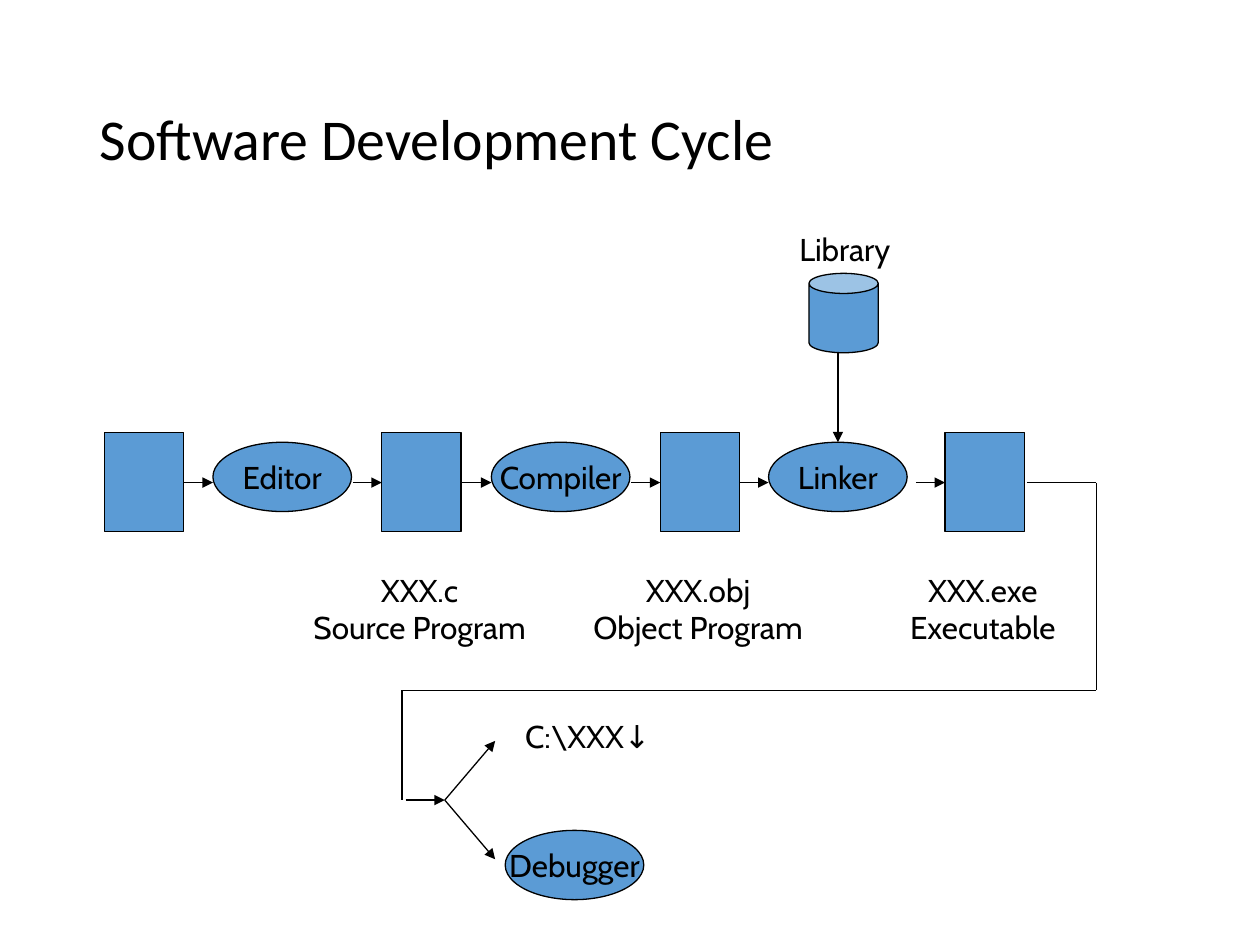
from dataclasses import dataclass
from itertools import pairwise

from lxml.etree import SubElement
from pptx import Presentation
from pptx.dml.color import RGBColor
from pptx.enum.shapes import MSO_CONNECTOR, MSO_SHAPE
from pptx.enum.text import MSO_ANCHOR, MSO_AUTO_SIZE, PP_ALIGN
from pptx.oxml.ns import qn
from pptx.util import Inches, Pt

COLUMNS, ROWS = 100, 75


@dataclass(frozen=True)
class Theme:
    fill: RGBColor = RGBColor(0x5B, 0x9B, 0xD5)
    ink: RGBColor = RGBColor(0, 0, 0)
    title_font: str = "Calibri"
    body_font: str = "Cabin"
    title_size: Pt = Pt(33)
    body_size: Pt = Pt(18)
    line_width: Pt = Pt(0.75)


class Deck:
    """Draws on the current slide; lengths are grid columns and rows."""

    def __init__(self, theme):
        self.theme = theme
        self.prs = Presentation()
        self.prs.slide_width, self.prs.slide_height = Inches(10), Inches(7.5)
        self.s = self.prs.slides.add_slide(self.prs.slide_layouts[5])

    def grid(self, *lengths):
        """Turn alternating columns and rows into slide lengths."""
        units = (self.prs.slide_width / COLUMNS, self.prs.slide_height / ROWS)
        return [round(v * units[i % 2]) for i, v in enumerate(lengths)]

    def styled_run(self, p, text, font, size):
        r = p.add_run()
        r.text = text
        r.font.name, r.font.size = font, size
        r.font.color.rgb = self.theme.ink

    def centred_lines(self, tf, lines):
        for i, line in enumerate(lines):
            p = tf.add_paragraph() if i else tf.paragraphs[0]
            p.alignment = PP_ALIGN.CENTER
            self.styled_run(p, line, self.theme.body_font, self.theme.body_size)

    def title(self, text, box):
        sp = self.s.shapes.title
        sp.left, sp.top, sp.width, sp.height = self.grid(*box)
        tf = sp.text_frame
        tf.vertical_anchor = MSO_ANCHOR.MIDDLE
        p = tf.paragraphs[0]
        p.alignment, p.line_spacing = PP_ALIGN.LEFT, 0.9
        self.styled_run(p, text, self.theme.title_font, self.theme.title_size)

    def shape(self, kind, box, text=None):
        sp = self.s.shapes.add_shape(kind, *self.grid(*box))
        sp.shadow.inherit = False
        sp.fill.solid()
        sp.fill.fore_color.rgb = self.theme.fill
        sp.line.color.rgb = self.theme.ink
        sp.line.width = self.theme.line_width
        if text:
            tf = sp.text_frame
            tf.word_wrap = False
            tf.vertical_anchor = MSO_ANCHOR.MIDDLE
            self.centred_lines(tf, [text])
        return sp

    def file(self, x, y):
        self.shape(MSO_SHAPE.RECTANGLE, (x, y, 6.3, 7.9))

    def tool(self, text, x, y):
        self.shape(MSO_SHAPE.OVAL, (x, y, 11, 5.5), text)

    def label(self, lines, box, wrap=False):
        tf = self.s.shapes.add_textbox(*self.grid(*box)).text_frame
        tf.word_wrap = wrap
        tf.auto_size = MSO_AUTO_SIZE.SHAPE_TO_FIT_TEXT
        self.centred_lines(tf, lines)

    def line(self, start, end, arrow=False):
        c = self.s.shapes.add_connector(
            MSO_CONNECTOR.STRAIGHT, *self.grid(*start, *end))
        c.line.color.rgb = self.theme.ink
        c.line.width = self.theme.line_width
        if arrow:
            SubElement(c.get_or_add_ln(), qn("a:tailEnd"), type="triangle")
        SubElement(c.element.spPr, qn("a:effectLst"))


def main():
    deck = Deck(Theme())
    deck.title("Software Development Cycle", (6.9, 4, 86.2, 14.5))

    files = (8.3, 30.3, 52.4, 75)
    tools = {"Editor": 16.9, "Compiler": 39, "Linker": 61}
    flow_y, arrow_length = 38.3, 2.3
    for x in files:
        deck.file(x, 34.3)
    for name, x in tools.items():
        deck.tool(name, x, 35.1)
    for x in (*files[1:], *tools.values()):
        deck.line((x - arrow_length, flow_y), (x, flow_y), arrow=True)

    captions = (("XXX.c", "Source Program", 20.2),
                ("XXX.obj", "Object Program", 19.5),
                ("XXX.exe", "Executable", 14.4))
    for x, (name, role, width) in zip(files[1:], captions):
        deck.label([name, role], (x + 3 - width / 2, 44.8, width, 7))

    deck.label(["Library"], (62.2, 17.8, 9.7, 4))
    library = deck.shape(MSO_SHAPE.CAN, (64.2, 21.7, 5.5, 6.3))
    library.adjustments[0] = 0.29
    deck.line((66.5, 28), (66.5, 35.1), arrow=True)

    run_y = 63.5
    fork = (35.3, run_y)
    route = ((81.5, flow_y), (87, flow_y), (87, 54.8), (31.9, 54.8), (31.9, run_y))
    for start, end in pairwise(route):
        deck.line(start, end)
    deck.line((32.2, run_y), fork, arrow=True)
    for rise in (-4.7, 4.7):
        deck.line(fork, (39.3, run_y + rise), arrow=True)
    deck.label(["C:\\XXX↓"], (40.1, 56.4, 13.1, 4), wrap=True)
    deck.tool("Debugger", 40.1, 65.9)

    deck.prs.save("out.pptx")


if __name__ == "__main__":
    main()
